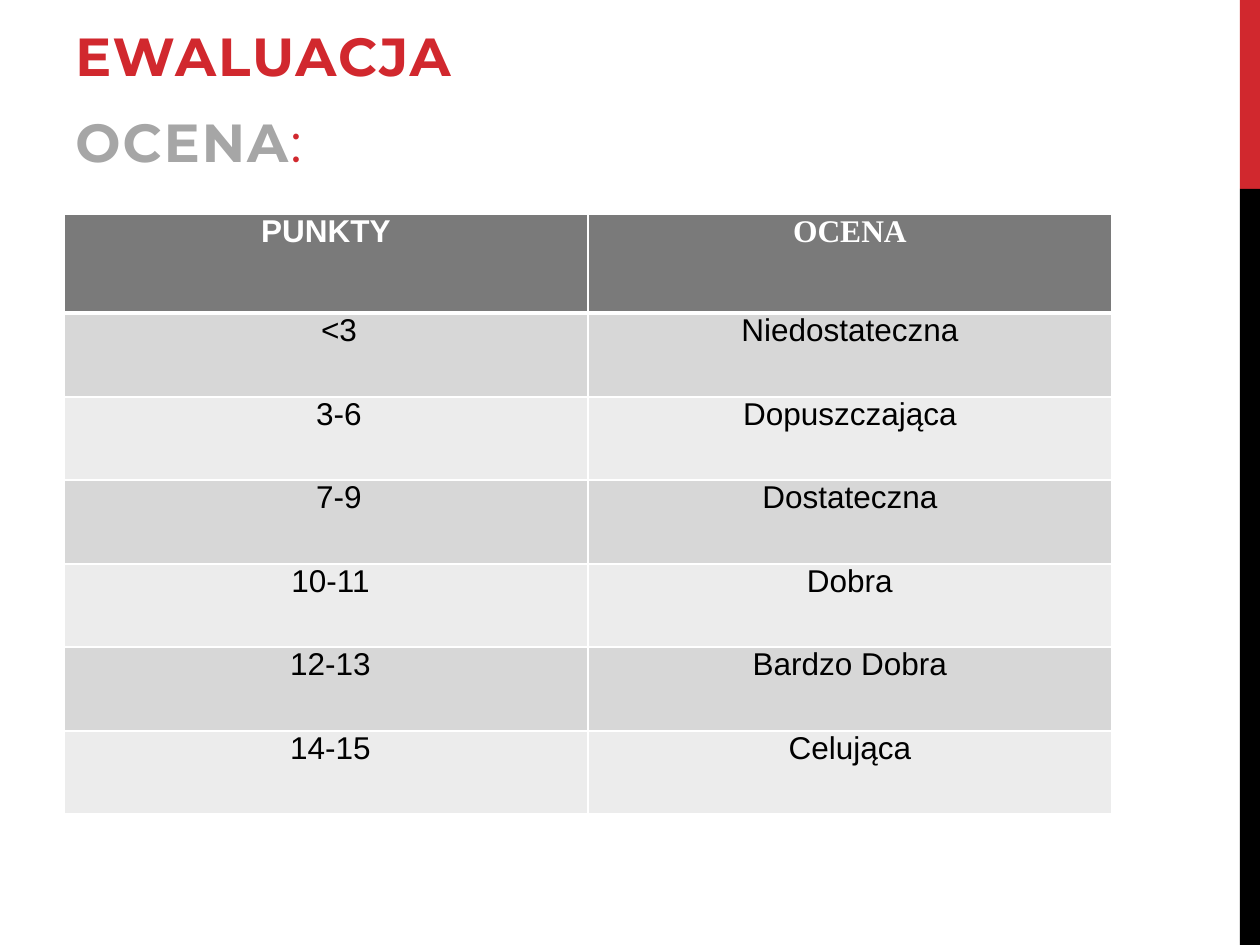
from lxml.etree import SubElement
from pptx import Presentation
from pptx.dml.color import RGBColor
from pptx.enum.shapes import MSO_SHAPE
from pptx.enum.text import MSO_ANCHOR, PP_ALIGN
from pptx.oxml.ns import qn
from pptx.util import Pt

PX = 914400 // 126
COLORS = {
    "red": "D1282E", "black": "000000", "white": "FFFFFF", "gray": "A6A6A6",
    "head": "7A7A7A", "dark": "D7D7D7", "light": "ECECEC",
}
# points, grade, left indent of the points
ROWS = [
    ("PUNKTY", "OCENA", 0),
    ("<3", "Niedostateczna", 26),
    ("3-6", "Dopuszczająca", 26),
    ("7-9", "Dostateczna", 26),
    ("10-11", "Dobra", 9),
    ("12-13", "Bardzo Dobra", 9),
    ("14-15", "Celująca", 9),
]


def color(name):
    return RGBColor.from_string(COLORS[name])


def add_edge(cell, side, width):
    """Draw a white border on one side (L, R, T or B) of a cell."""
    props = cell._tc.get_or_add_tcPr()
    line = SubElement(props, qn(f"a:ln{side}"), w=str(Pt(width)))
    fill = SubElement(line, qn("a:solidFill"))
    SubElement(fill, qn("a:srgbClr"), val=COLORS["white"])


deck = Presentation()
deck.slide_width, deck.slide_height = 1260 * PX, 945 * PX
slide = deck.slides.add_slide(deck.slide_layouts[6])

# Side bar
for top, height, name in [(0, 189, "red"), (189, 756, "black")]:
    bar = slide.shapes.add_shape(
        MSO_SHAPE.RECTANGLE, 1240 * PX, top * PX, 20 * PX, height * PX)
    bar.shadow.inherit = False
    bar.fill.solid()
    bar.fill.fore_color.rgb = color(name)
    bar.line.fill.background()

# Heading
box = slide.shapes.add_textbox(63 * PX, 32 * PX, 1071 * PX, 147 * PX)
frame = box.text_frame
frame.word_wrap = True
frame.vertical_anchor = MSO_ANCHOR.BOTTOM
lines = [
    [("EWALUACJA", "red", True)],
    [("OCENA", "gray", True), (":", "red", False)],
]
for i, parts in enumerate(lines):
    para = frame.add_paragraph() if i else frame.paragraphs[0]
    para.space_before = para.space_after = Pt(6)
    para.font.size = Pt(30.6)
    para.font.name = "Montserrat"
    for text, name, bold in parts:
        run = para.add_run()
        run.text = text
        run.font.bold = bold
        run.font.color.rgb = color(name)
        run.font._element.set("spc", "120")

# Grade table
table = slide.shapes.add_table(
    len(ROWS), 2, 64 * PX, 214 * PX, 1048 * PX, 600 * PX).table
for r, (points, grade, indent) in enumerate(ROWS):
    head = r == 0
    table.rows[r].height = (99 if head else 83 + r % 2) * PX
    shade = "head" if head else "dark" if r % 2 else "light"
    for c, text in enumerate((points, grade)):
        cell = table.cell(r, c)
        cell.margin_left = (9 + (0 if c else indent)) * PX
        cell.margin_right = 9 * PX
        cell.margin_top = cell.margin_bottom = 0
        for side in "LRTB":
            thick = (r, side) in [(0, "B"), (1, "T")]
            add_edge(cell, side, 3 if thick else 1)
        cell.fill.solid()
        cell.fill.fore_color.rgb = color(shade)
        cell.text = text
        para = cell.text_frame.paragraphs[0]
        para.alignment = PP_ALIGN.CENTER
        font = para.font
        font.name = "Times New Roman" if head and c else "Arial"
        font.size = Pt(18)
        font.bold = head
        font.color.rgb = color("white" if head else "black")

deck.save("out.pptx")
